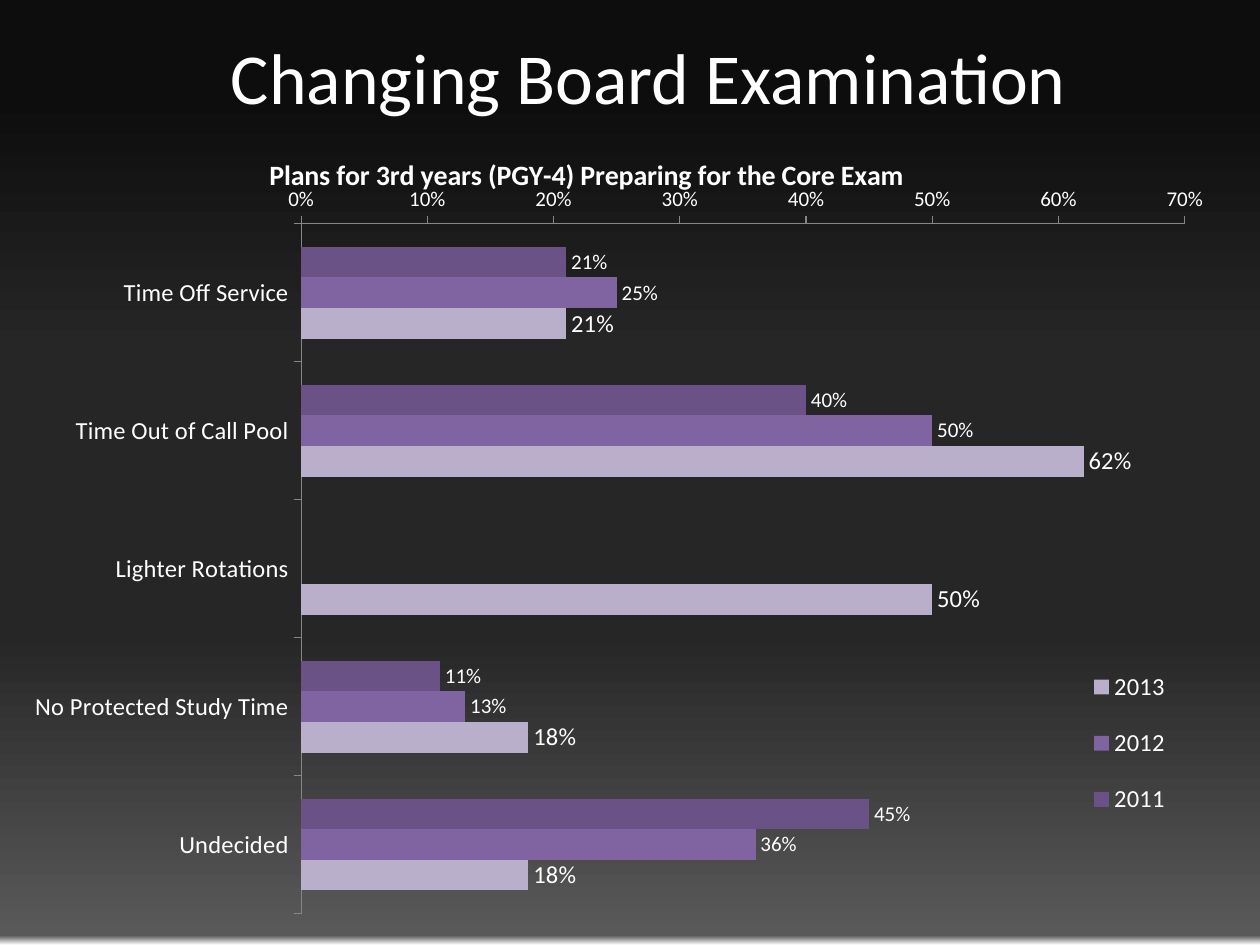
from lxml import etree
from pptx import Presentation
from pptx.chart.data import CategoryChartData
from pptx.dml.color import RGBColor
from pptx.enum.chart import XL_CHART_TYPE, XL_LABEL_POSITION, XL_LEGEND_POSITION, XL_TICK_MARK
from pptx.enum.text import MSO_ANCHOR, PP_ALIGN
from pptx.oxml.ns import qn
from pptx.util import Inches, Pt

BAR = XL_CHART_TYPE.BAR_CLUSTERED
OUT_END = XL_LABEL_POSITION.OUTSIDE_END
RIGHT = XL_LEGEND_POSITION.RIGHT
OUTSIDE, NO_TICK = XL_TICK_MARK.OUTSIDE, XL_TICK_MARK.NONE
MIDDLE, CENTER = MSO_ANCHOR.MIDDLE, PP_ALIGN.CENTER

WHITE = RGBColor(0xFF, 0xFF, 0xFF)
GRAY = RGBColor(0x86, 0x86, 0x86)
DARK = RGBColor(0x6A, 0x52, 0x86)
PURPLE = RGBColor(0x80, 0x64, 0xA2)
PALE = RGBColor(0xB9, 0xAF, 0xCA)
BLACK = RGBColor(0x0D, 0x0D, 0x0D)
COAL = RGBColor(0x26, 0x26, 0x26)
SLATE = RGBColor(0x59, 0x59, 0x59)

FONT = "Calibri"
STOPS = [(10, BLACK), (37, COAL), (67, COAL), (99, SLATE), (100, WHITE)]
PLANS = ["Time Off Service", "Time Out of Call Pool", "Lighter Rotations",
         "No Protected Study Time", "Undecided"]
YEARS = [
    ("2011", (0.21, 0.4, None, 0.11, 0.45), DARK, 12),
    ("2012", (0.25, 0.5, None, 0.13, 0.36), PURPLE, 12),
    ("2013", (0.21, 0.62, 0.5, 0.18, 0.18), PALE, 14),
]


def style(font, size, bold=False):
    """Give a font the slide's face and colour."""
    font.name = FONT
    font.size = Pt(size)
    font.bold = bold
    font.color.rgb = WHITE


def paint(slide):
    """Fill the background with a vertical gradient."""
    fill = slide.background.fill
    fill.gradient()
    fill.gradient_angle = 270
    stops = slide.background._cSld.find(".//" + qn("a:gsLst"))
    for old in list(stops):
        stops.remove(old)
    for place, color in STOPS:
        stop = etree.SubElement(stops, qn("a:gs"), pos=str(place * 1000))
        etree.SubElement(stop, qn("a:srgbClr"), val=str(color))


def add_title(slide, text):
    """Place the slide title."""
    title = slide.shapes.title
    title.left, title.top = Inches(0.65), Inches(0.16)
    title.width, title.height = Inches(9), Inches(0.89)
    frame = title.text_frame
    frame.text = text
    frame.vertical_anchor = MIDDLE
    para = frame.paragraphs[0]
    para.alignment = CENTER
    style(para.runs[0].font, 41)


def lay_out(part, index, inner=False, **box):
    """Set a chart part's place in fractions of the chart."""
    for old in part.findall(qn("c:layout")):
        part.remove(old)
    layout = etree.Element(qn("c:layout"))
    part.insert(index, layout)
    manual = etree.SubElement(layout, qn("c:manualLayout"))
    if inner:
        etree.SubElement(manual, qn("c:layoutTarget"), val="inner")
    for key in ("x", "y"):
        etree.SubElement(manual, qn(f"c:{key}Mode"), val="edge")
    for key, value in box.items():
        etree.SubElement(manual, qn(f"c:{key}"), val=str(value))


def set_axis(axis, size):
    """Format an axis and its labels."""
    axis.has_major_gridlines = False
    axis.major_tick_mark = OUTSIDE
    axis.minor_tick_mark = NO_TICK
    axis.format.line.color.rgb = GRAY
    axis.format.line.width = Pt(0.75)
    style(axis.tick_labels.font, size)


def set_bars(plot):
    """Colour and label each year's bars."""
    plot.gap_width = 150
    plot.overlap = 0
    plot.vary_by_categories = False
    for series, (_, _, color, size) in zip(plot.series, YEARS):
        series.invert_if_negative = False
        series.format.fill.solid()
        series.format.fill.fore_color.rgb = color
        labels = series.data_labels
        labels.show_value = True
        labels.number_format = "0%"
        labels.number_format_is_linked = False
        labels.position = OUT_END
        style(labels.font, size)


def add_bars(slide, text):
    """Add the clustered bar chart."""
    data = CategoryChartData(number_format="0%")
    data.categories = PLANS
    for name, values, _, _ in YEARS:
        data.add_series(name, values)
    chart = slide.shapes.add_chart(BAR, Inches(0.15), Inches(0.94),
                                   Inches(9.74), Inches(6.44), data).chart
    style(chart.font, 10)
    set_bars(chart.plots[0])

    plans, scale = chart.category_axis, chart.value_axis
    set_axis(plans, 14)
    plans.reverse_order = True
    set_axis(scale, 12)
    scale.minimum_scale, scale.maximum_scale = 0, 0.7
    scale.major_unit = 0.1
    scale.tick_labels.number_format = "0%"
    scale.tick_labels.number_format_is_linked = False

    chart.has_title = True
    title = chart.chart_title
    title.text_frame.text = text
    style(title.text_frame.paragraphs[0].runs[0].font, 16, True)
    title.include_in_layout = False

    chart.has_legend = True
    legend = chart.legend
    legend.position = RIGHT
    legend.include_in_layout = False
    style(legend.font, 14)

    area = chart._chartSpace.chart.plotArea
    lay_out(area, 0, True, x=0.23, y=0.13, w=0.72, h=0.85)
    lay_out(title._element, 1, x=0.2, y=0.04)
    lay_out(legend._element, 1, x=0.86, y=0.65, w=0.09, h=0.24)


def main():
    """Build and save the slide."""
    deck = Presentation()
    deck.slide_width, deck.slide_height = Inches(10), Inches(7.5)
    slide = deck.slides.add_slide(deck.slide_layouts[5])
    paint(slide)
    add_bars(slide, "Plans for 3rd years (PGY-4) Preparing for the Core Exam")
    add_title(slide, "Changing Board Examination")
    deck.save("out.pptx")


if __name__ == "__main__":
    main()
